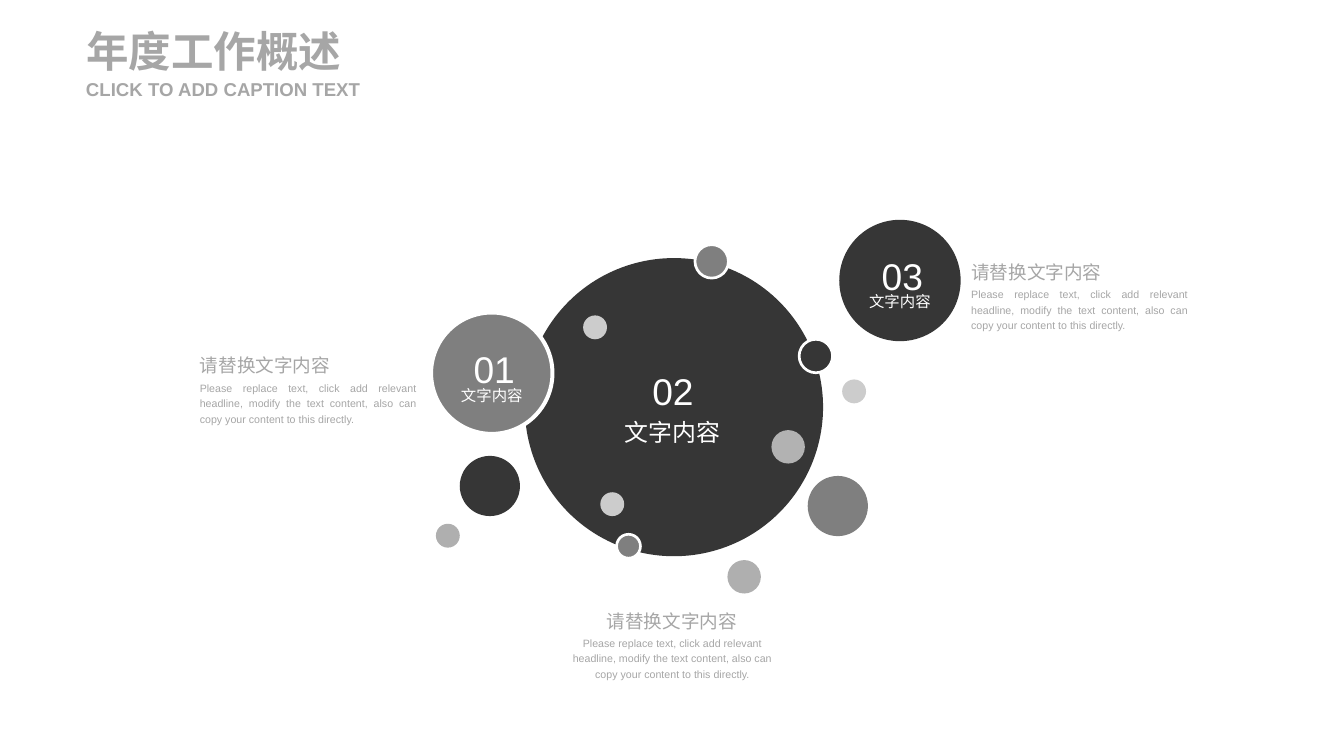
"""Build the annual work overview slide with its cluster of circles."""
from pptx import Presentation
from pptx import util as u
from pptx.dml.color import RGBColor
from pptx.enum import shapes, text

PX = u.Inches(1) // 100
FONT = "Arial"
WHITE = RGBColor(0xFF, 0xFF, 0xFF)
DARK = RGBColor(0x36, 0x36, 0x36)
MID = RGBColor(0x7F, 0x7F, 0x7F)
SOFT = RGBColor(0xB2, 0xB2, 0xB2)
SILVER = RGBColor(0xAF, 0xAF, 0xAF)
PALE = RGBColor(0xCC, 0xCC, 0xCC)
TEXT_GREY = RGBColor(0xA6, 0xA6, 0xA6)

LEFT, CENTER, JUSTIFY = (
    text.PP_ALIGN.LEFT, text.PP_ALIGN.CENTER, text.PP_ALIGN.JUSTIFY)
TOP, MIDDLE = text.MSO_ANCHOR.TOP, text.MSO_ANCHOR.MIDDLE

TOPIC = "文字内容"
HEADING = "请替换文字内容"
DETAIL = ("Please replace text, click add relevant headline, modify the text "
          "content, also can copy your content to this directly.")

# left, top, diameter, fill, outline width in points
CIRCLES = [
    (549, 270, 312, DARK, 0),
    (727, 256, 35, MID, 2),
    (645, 559, 25, MID, 2),
    (881, 397, 25, PALE, 0),
    (761, 586, 35, SILVER, 0),
    (610, 330, 25, PALE, 0),
    (451, 327, 127, MID, 3),
    (807, 450, 35, SOFT, 0),
    (481, 477, 63, DARK, 0),
    (878, 230, 127, DARK, 0),
    (836, 355, 35, DARK, 2),
    (456, 548, 25, SILVER, 0),
    (628, 515, 25, PALE, 0),
    (845, 498, 63, MID, 0),
]

# number, its left and top, topic left, top, height and size
LABELS = [
    ("01", 484, 353, 459, 401, 21, 11.6),
    ("02", 671, 376, 648, 433, 33, 18),
    ("03", 911, 256, 886, 303, 21, 11.6),
]

# heading left, detail left, heading top, alignment
NOTES = [
    (209, 209, 366, JUSTIFY),
    (617, 590, 633, CENTER),
    (1016, 1016, 268, JUSTIFY),
]


def add_circle(page, left, top, diameter, fill, outline):
    """Draw a filled circle, with a white outline where a width is given."""
    circle = page.shapes.add_shape(
        shapes.MSO_SHAPE.OVAL, left * PX, top * PX, diameter * PX, diameter * PX)
    circle.shadow.inherit = False
    circle.fill.solid()
    circle.fill.fore_color.rgb = fill
    if outline:
        circle.line.color.rgb = WHITE
        circle.line.width = u.Pt(outline)
    else:
        circle.line.fill.background()


def write(box, area, words, size, color, align, anchor=TOP, bold=False,
          spacing=1.2):
    """Place a text shape and fill it with one paragraph, which is returned."""
    box.left, box.top, box.width, box.height = (side * PX for side in area)
    frame = box.text_frame
    frame.margin_left = frame.margin_right = 0
    frame.margin_top = frame.margin_bottom = 0
    frame.word_wrap = True
    frame.auto_size = text.MSO_AUTO_SIZE.SHAPE_TO_FIT_TEXT
    frame.vertical_anchor = anchor
    para = frame.paragraphs[0]
    para.text = words
    para.alignment = align
    para.line_spacing = spacing
    para.font.name = FONT
    para.font.size = u.Pt(size)
    para.font.bold = bold
    para.font.color.rgb = color
    return para


def add_text(page, *args, **options):
    """Add a text box and return its paragraph."""
    return write(page.shapes.add_textbox(0, 0, 0, 0), *args, **options)


def add_label(page, number, left, top, topic_left, topic_top, height, size):
    """Add a white number with its topic below."""
    add_text(page, (topic_left, topic_top, 111, height), TOPIC, size, WHITE,
             CENTER, MIDDLE)
    add_text(page, (left, top, 66, 51), number, 28, WHITE, CENTER)


def add_note(page, heading_left, detail_left, top, align):
    """Add a grey heading with its detail text below."""
    detail = add_text(page, (detail_left, top + 31, 227, 47), DETAIL, 8,
                      TEXT_GREY, align)
    detail.space_before = u.Pt(1.6)
    detail.space_after = u.Pt(6)
    add_text(page, (heading_left, top, 172, 28), HEADING, 14, TEXT_GREY, align)


def main():
    """Build and save the slide."""
    deck = Presentation()
    deck.slide_width, deck.slide_height = 1406 * PX, 791 * PX
    page = deck.slides.add_slide(deck.slide_layouts.get_by_name("Title Only"))
    for circle in CIRCLES:
        add_circle(page, *circle)
    for label in LABELS:
        add_label(page, *label)
    for note in NOTES:
        add_note(page, *note)
    write(page.shapes.title, (90, 26, 307, 54), "年度工作概述", 32, TEXT_GREY,
          LEFT, MIDDLE, bold=True, spacing=1.0)
    add_text(page, (90, 81, 307, 24), "CLICK TO ADD CAPTION TEXT", 14,
             TEXT_GREY, LEFT, MIDDLE, bold=True, spacing=1.0)
    deck.save("out.pptx")


if __name__ == "__main__":
    main()
